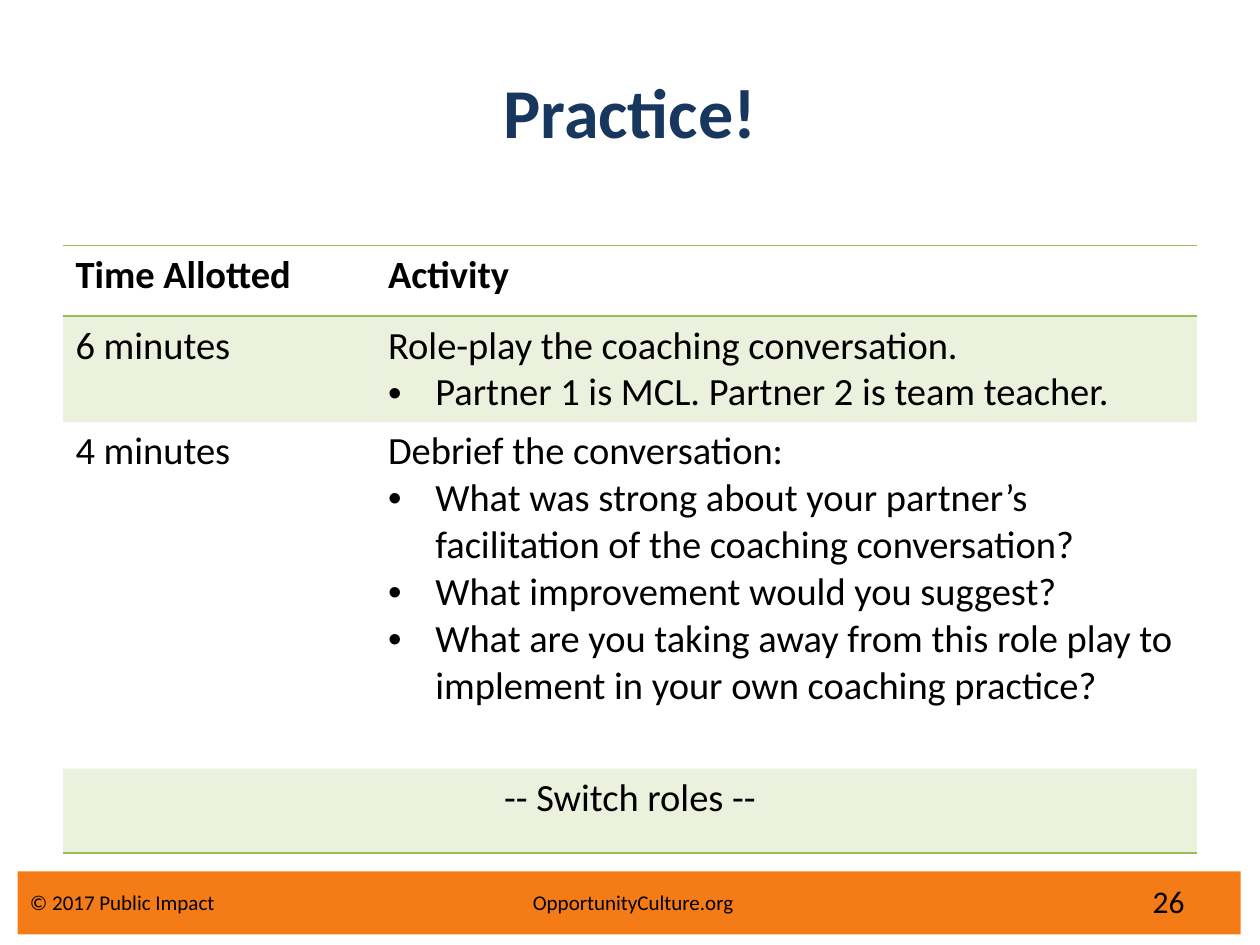
from dataclasses import dataclass
from typing import NamedTuple

from lxml import etree
from pptx import Presentation
from pptx.dml.color import RGBColor
from pptx.enum import shapes, text
from pptx.oxml import ns
from pptx.util import Pt

LEFT, MID, RIGHT = text.PP_ALIGN.LEFT, text.PP_ALIGN.CENTER, text.PP_ALIGN.RIGHT


@dataclass(frozen=True)
class Theme:
    font: str = "Calibri"
    navy: str = "17375E"
    black: str = "000000"
    green: str = "9BBB59"
    orange: str = "F57B17"
    tint: int = 20
    title: int = 40
    body: int = 22
    page: int = 18
    foot: int = 12
    indent: int = 27


class Label(NamedTuple):
    words: str
    box: tuple
    size: int
    color: str
    align: int = LEFT
    bold: bool = False
    tab: float = 0


class Line(NamedTuple):
    words: str
    bullet: bool = False


class Row(NamedTuple):
    height: float
    cells: list
    bold: bool = False
    shade: bool = False
    rules: str = ""
    span: bool = False


T = Theme()


def add(parent, tag: str, **attrs):
    """Append a drawing element with the given attributes."""
    node = etree.SubElement(parent, ns.qn(tag))
    for key, val in attrs.items():
        node.set(key, str(val))
    return node


def style(para, size: int, color: str, bold: bool) -> None:
    for run in para.runs:
        look = {"name": T.font, "size": Pt(size), "bold": bold}
        for key, val in look.items():
            setattr(run.font, key, val)
        run.font.color.rgb = RGBColor.from_string(color)


def draw_label(slide, item: Label) -> None:
    frame = slide.shapes.add_textbox(*map(Pt, item.box)).text_frame
    frame.word_wrap = True
    frame.vertical_anchor = text.MSO_ANCHOR.MIDDLE
    para = frame.paragraphs[0]
    para.text = item.words
    para.alignment = item.align
    if item.tab:
        stops = add(para._p.get_or_add_pPr(), "a:tabLst")
        add(stops, "a:tab", pos=Pt(item.tab), algn="l")
    style(para, item.size, item.color, item.bold)


def fill_cell(cell, lines: list, row: Row) -> None:
    # Text and bullets
    for num, line in enumerate(lines):
        frame = cell.text_frame
        para = frame.add_paragraph() if num else frame.paragraphs[0]
        para.text = line.words
        para.alignment = MID if row.span else LEFT
        if line.bullet:
            props = para._p.get_or_add_pPr()
            props.set("marL", str(Pt(T.indent)))
            props.set("indent", str(-Pt(T.indent)))
            add(props, "a:buFont", typeface="Arial")
            add(props, "a:buChar", char="•")
        style(para, T.body, T.black, row.bold)
    # Rules come before the fill
    props = cell._tc.get_or_add_tcPr()
    for side in row.rules:
        rule = add(props, f"a:ln{side}", w=Pt(1))
        add(add(rule, "a:solidFill"), "a:srgbClr", val=T.green)
    if row.shade:
        cell.fill.solid()
        cell.fill.fore_color.rgb = RGBColor.from_string(T.green)
        for color in props.findall(ns.qn("a:solidFill") + "/" + ns.qn("a:srgbClr")):
            add(color, "a:alpha", val=T.tint * 1000)
    else:
        cell.fill.background()


def draw_table(slide, box: tuple, cols: list, rows: list) -> None:
    grid = slide.shapes.add_table(len(rows), len(cols), *map(Pt, box)).table
    grid.first_row = grid.horz_banding = False
    plain = grid._tbl.tblPr.find(ns.qn("a:tableStyleId"))
    plain.text = "{2D5ABB26-0587-4C30-8999-92F81FD0307C}"
    for col, width in zip(grid.columns, cols):
        col.width = Pt(width)
    for num, row in enumerate(rows):
        grid.rows[num].height = Pt(row.height)
        if row.span:
            grid.cell(num, 0).merge(grid.cell(num, len(cols) - 1))
        for pos, lines in enumerate(row.cells):
            fill_cell(grid.cell(num, pos), lines, row)


ROWS = [
    Row(40.3, [[Line("Time Allotted")], [Line("Activity")]], bold=True, rules="TB"),
    Row(60.5, [
        [Line("6 minutes")],
        [Line("Role-play the coaching conversation."),
         Line("Partner 1 is MCL. Partner 2 is team teacher.", True)],
    ], shade=True),
    Row(198, [
        [Line("4 minutes")],
        [Line("Debrief the conversation:"),
         Line("What was strong about your partner’s facilitation of the "
              "coaching conversation?", True),
         Line("What improvement would you suggest?", True),
         Line("What are you taking away from this role play to implement "
              "in your own coaching practice?", True)],
    ]),
    Row(48.2, [[Line("-- Switch roles --")], []], shade=True, rules="B", span=True),
]

LABELS = [
    Label("Practice!", (36, 18, 648, 90), T.title, T.navy, MID, True),
    Label("26", (636, 500.4, 48, 28.8), T.page, T.black, RIGHT),
    Label("© 2017 Public Impact\tOpportunityCulture.org",
          (10, 501.1, 542, 28.8), T.foot, T.black, tab=287.4),
]


def main() -> None:
    deck = Presentation()
    deck.slide_width, deck.slide_height = Pt(720), Pt(540)
    slide = deck.slides.add_slide(deck.slide_layouts[6])

    # Footer band
    band = slide.shapes.add_shape(
        shapes.MSO_SHAPE.RECTANGLE, *map(Pt, (10, 498, 699, 36)))
    band.shadow.inherit = False
    band.fill.solid()
    band.fill.fore_color.rgb = RGBColor.from_string(T.orange)
    band.line.fill.background()

    # Title, page number and footer text
    for item in LABELS:
        draw_label(slide, item)

    # Schedule
    height = sum(row.height for row in ROWS)
    draw_table(slide, (36, 140.4, 648, height), [178.6, 469.4], ROWS)

    deck.save("out.pptx")


if __name__ == "__main__":
    main()
